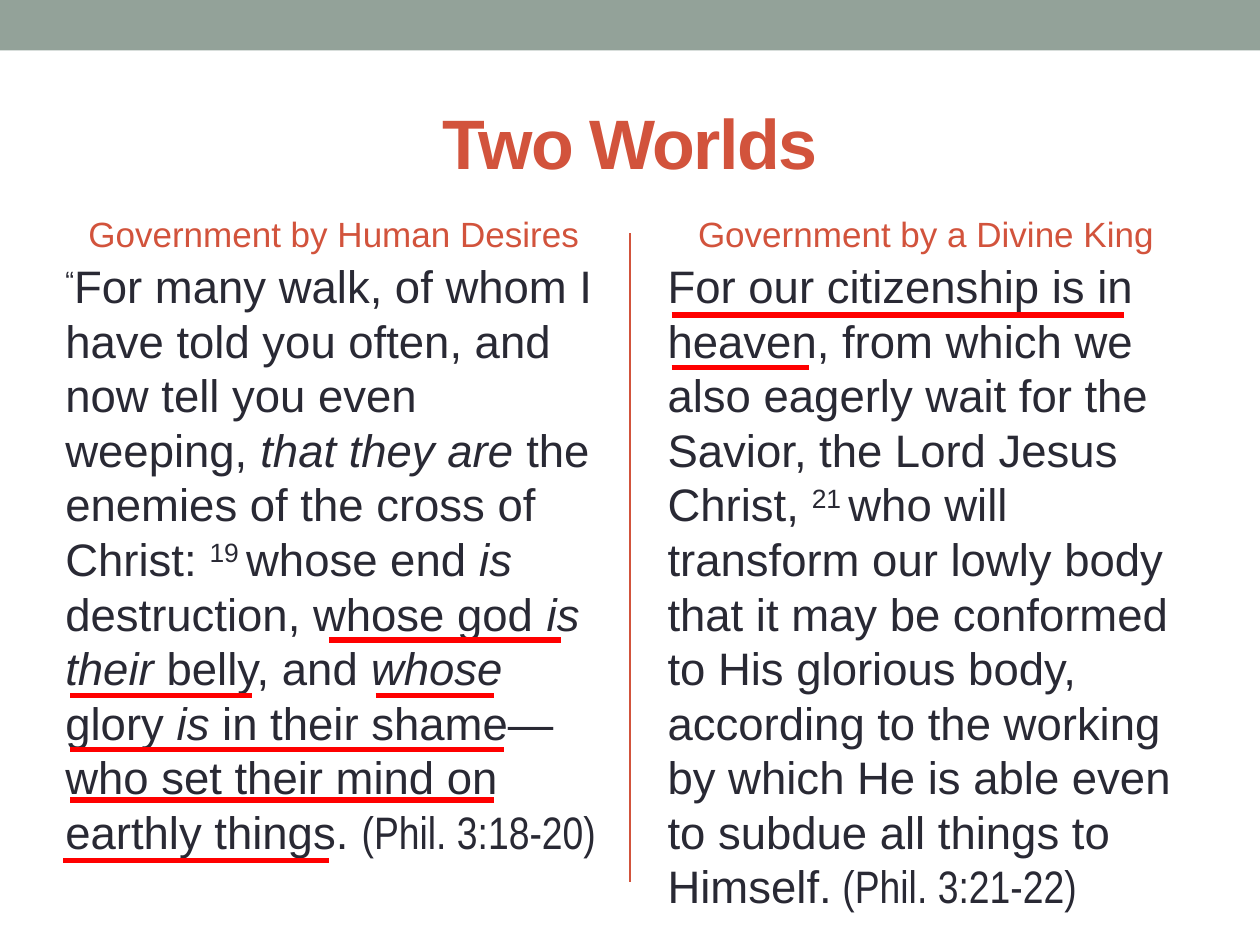
from pptx import Presentation
from pptx.dml.color import RGBColor
from pptx.enum import shapes, text
from pptx.util import Pt
from lxml import etree

HEX = {"bar": "93A299", "accent": "D2533C", "ink": "292934", "mark": "FF0000"}
NS = "http://schemas.openxmlformats.org/drawingml/2006/main"

# Run styles: font values, then raw run attributes
FONT = {
    "": {},
    "i": {"italic": True},
    "sup": {},
    "ref": {"name": "Arial Narrow"},
    "title": {"bold": True},
}
RAW = {"sup": {"baseline": "30000"}, "title": {"spc": "-100"}}


class Page:
    def __init__(self, deck):
        self.slide = deck.slides.add_slide(deck.slide_layouts[6])
        self.items = self.slide.shapes

    def color(self, key):
        return RGBColor.from_string(HEX[key])

    def bar(self, x, y, w, h, fill):
        box = self.items.add_shape(shapes.MSO_SHAPE.RECTANGLE, Pt(x), Pt(y), Pt(w), Pt(h))
        box.shadow.inherit = False
        box.fill.solid()
        box.fill.fore_color.rgb = self.color(fill)
        box.line.fill.background()

    def line(self, x1, y1, x2, y2, color, width):
        line = self.items.add_connector(
            shapes.MSO_CONNECTOR.STRAIGHT, Pt(x1), Pt(y1), Pt(x2), Pt(y2))
        line.line.color.rgb = self.color(color)
        line.line.width = Pt(width)
        etree.SubElement(line._element.spPr, f"{{{NS}}}effectLst")

    def text(self, x, y, w, h, runs, size, color, mid=True):
        frame = self.items.add_textbox(Pt(x), Pt(y), Pt(w), Pt(h)).text_frame
        frame.word_wrap = True
        frame.vertical_anchor = text.MSO_ANCHOR.MIDDLE if mid else text.MSO_ANCHOR.TOP
        para = frame.paragraphs[0]
        para.alignment = text.PP_ALIGN.CENTER if mid else text.PP_ALIGN.LEFT
        for words, style in runs:
            run = para.add_run()
            run.text = words
            run.font.color.rgb = self.color(color)
            form = {"name": "Arial", "size": Pt(size), **FONT[style]}
            for key, value in form.items():
                setattr(run.font, key, value)
            for key, value in RAW.get(style, {}).items():
                run.font._element.set(key, value)


# Columns: left of heading, heading, left and width of verse, verse
COLS = [
    (36, "Government by Human Desires", 30.24, 320.4, [
        ("“", "sup"),
        ("For many walk, of whom I have told you often, and now tell you even weeping, ", ""),
        ("that they are", "i"),
        (" the enemies of the cross of Christ: ", ""),
        ("19 ", "sup"),
        ("whose end ", ""),
        ("is", "i"),
        (" destruction, whose god ", ""),
        ("is their", "i"),
        (" belly, and ", ""),
        ("whose", "i"),
        (" glory ", ""),
        ("is", "i"),
        (" in their shame—who set their mind on earthly things. ", ""),
        ("(Phil. 3:18-20)", "ref"),
    ]),
    (374.4, "Government by a Divine King", 374.4, 321.84, [
        ("For our citizenship is in heaven, from which we also eagerly wait for the "
         "Savior, the Lord Jesus Christ, ", ""),
        ("21 ", "sup"),
        ("who will transform our lowly body that it may be conformed to His glorious "
         "body, according to the working by which He is able even to subdue all "
         "things to Himself.", ""),
        (" (Phil. 3:21-22)", "ref"),
    ]),
]

# Underlines: start, end, height
MARKS = [
    (188, 320.4, 365.8),
    (383.8, 642.2, 180),
    (40.3, 144, 397.4),
    (214.6, 282.2, 397.4),
    (36, 188, 491.8),
    (40.3, 288, 428.4),
    (40.3, 282.2, 457.2),
    (383.8, 462.2, 210.2),
]


def main():
    deck = Presentation()
    deck.slide_width, deck.slide_height = Pt(720), Pt(540)
    page = Page(deck)

    # Frame and title
    page.bar(0, 0, 720, 28.8, "bar")
    page.line(360, 133.2, 360, 504, "accent", 1.5)
    page.text(36, 41.76, 648, 77.76, [("Two Worlds", "title")], 40, "accent")

    # Two columns
    for head_x, head, x, w, verse in COLS:
        page.text(head_x, 108, 309.6, 50.4, [(head, "")], 20, "accent")
        page.text(x, 144, w, 311.04, verse, 26, "ink", mid=False)

    # Red underlines
    for start, end, y in MARKS:
        page.line(start, y, end, y, "mark", 3)

    deck.save("out.pptx")


if __name__ == "__main__":
    main()
